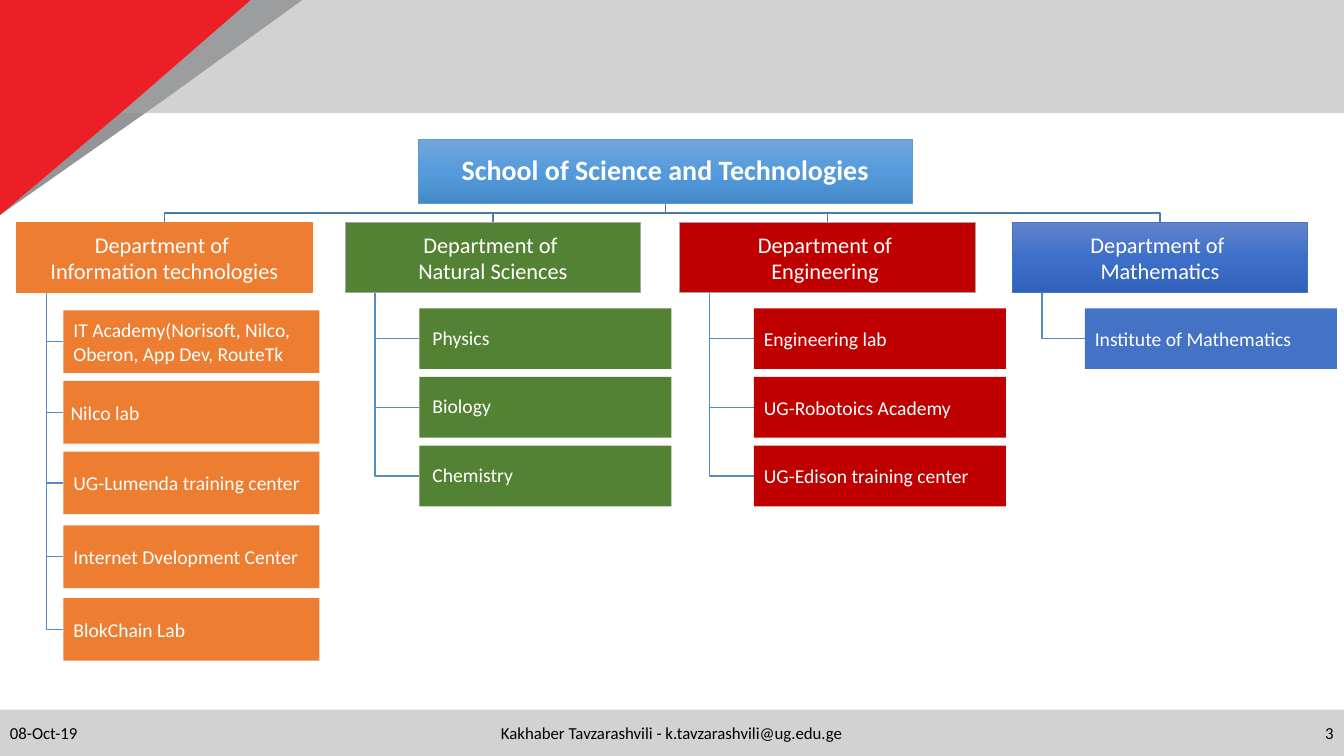
from copy import deepcopy
from dataclasses import dataclass

from lxml import etree
from pptx import Presentation
from pptx import util as u
from pptx.dml import color as dml
from pptx.enum import shapes, text
from pptx.oxml import ns

COLORS = {
    "white": "FFFFFF", "black": "000000", "band": "A6A6A6",
    "corner_red": "EC1F27", "corner_gray": "939597",
    "orange": "ED7D31", "green": "548235", "red": "C00000", "blue": "4472C4",
    "edge_gray": "A5A5A5", "edge_blue": "5B9BD5",
    "bus": "497CAB", "branch": "538DC1",
    "school_top": "71A6DB", "school_mid": "559BDB", "school_end": "448ACA",
    "maths_top": "6183CB", "maths_mid": "3E70CA", "maths_end": "3062BB",
}
SCHOOL_FILL = ("school_top", "school_mid", "school_end")
MATHS_FILL = ("maths_top", "maths_mid", "maths_end")

SLIDE_W, SLIDE_H = 33.87, 19.05
SCHOOL_LEFT, SCHOOL_TOP, SCHOOL_W, SCHOOL_H = 10.54, 3.52, 12.45, 1.61
DEPT_TOP, DEPT_W, DEPT_H = 5.61, 7.45, 1.76
BUS_Y = 5.37
TRUNK_SHIFT = 0.75
TIGHT, ROOMY = 0.03, 0.25


@dataclass
class Unit:
    name: str
    inset: float = ROOMY


@dataclass
class Department:
    lines: tuple[str, ...]
    left: float
    fills: tuple[str, ...]
    unit_fill: str
    edge: str
    unit_left: float
    units: tuple[Unit, ...]
    unit_tops: tuple[float, ...] = (7.77, 9.5, 11.23)
    unit_w: float = 6.35
    unit_h: float = 1.53
    spacing: float = 1.0


@dataclass
class FooterPart:
    words: str
    left: float
    width: float
    align: text.PP_ALIGN


DEPARTMENTS = (
    Department(
        ("Department of ", "Information technologies"), 0.42,
        ("orange",), "orange", "orange", 1.6,
        (Unit("IT Academy(Norisoft, Nilco, Oberon, App Dev, RouteTk"),
         Unit("Nilco lab", 0.18),
         Unit("UG-Lumenda training center"),
         Unit("Internet Dvelopment Center"),
         Unit("BlokChain Lab")),
        (7.82, 9.6, 11.38, 13.24, 15.07), 6.45, 1.58),
    Department(
        ("Department of ", "Natural Sciences"), 8.7,
        ("green",), "green", "edge_gray", 10.57,
        (Unit("Physics", 0.33), Unit("Biology", 0.33), Unit("Chemistry", 0.33)),
        spacing=0.9),
    Department(
        ("Department of ", "Engineering "), 17.13,
        ("red",), "red", "edge_gray", 19,
        (Unit("Engineering lab"), Unit("UG-Robotoics Academy"),
         Unit("UG-Edison training center"))),
    Department(
        ("Department of ", "Mathematics"), 25.51,
        MATHS_FILL, "blue", "blue", 27.34,
        (Unit("Institute of Mathematics"),)),
)
FOOTER = (
    FooterPart("08-Oct-19", 0, 7.62, text.PP_ALIGN.LEFT),
    FooterPart("Kakhaber Tavzarashvili - k.tavzarashvili@ug.edu.ge",
               7.62, 18.62, text.PP_ALIGN.CENTER),
    FooterPart("3", 26.24, 7.62, text.PP_ALIGN.RIGHT),
)


def rgb(name: str) -> dml.RGBColor:
    return dml.RGBColor.from_string(COLORS[name])


def paint(shape, fills: tuple[str, ...]) -> None:
    if len(fills) == 1:
        shape.fill.solid()
        shape.fill.fore_color.rgb = rgb(fills[0])
        return
    shape.fill.gradient()
    shape.fill.gradient_angle = 270
    stop_list = shape.element.xpath(".//a:gsLst")[0]
    stop_list.insert(1, deepcopy(stop_list[0]))
    for i, (stop, name) in enumerate(zip(shape.fill.gradient_stops, fills)):
        stop.color.rgb = rgb(name)
        stop.position = i / 2


def add_box(slide, left: float, top: float, width: float, height: float,
            fills: tuple[str, ...], edge: str | None = None):
    box = slide.shapes.add_shape(shapes.MSO_SHAPE.RECTANGLE, u.Cm(left),
                                 u.Cm(top), u.Cm(width), u.Cm(height))
    box.shadow.inherit = False
    paint(box, fills)
    if edge:
        box.line.color.rgb = rgb(edge)
        box.line.width = u.Pt(0.5)
    else:
        box.line.fill.background()
    return box


def write(shape, lines: tuple[str, ...], size: float, align: text.PP_ALIGN,
          inset: float, color: str = "white", bold: bool = False,
          spacing: float = 1.0) -> None:
    frame = shape.text_frame
    frame.word_wrap = True
    frame.vertical_anchor = text.MSO_ANCHOR.MIDDLE
    frame.margin_left = frame.margin_right = u.Cm(inset)
    frame.margin_top = frame.margin_bottom = u.Cm(TIGHT)
    for i, line in enumerate(lines):
        paragraph = frame.add_paragraph() if i else frame.paragraphs[0]
        paragraph.alignment = align
        paragraph.line_spacing = spacing
        run = paragraph.add_run()
        run.text = line
        run.font.name = "Calibri"
        run.font.size = u.Pt(size)
        run.font.bold = bold
        run.font.color.rgb = rgb(color)


def add_outline(slide, points: list[tuple[float, float]], closed: bool):
    corners = [(u.Cm(x), u.Cm(y)) for x, y in points]
    builder = slide.shapes.build_freeform(*corners[0])
    builder.add_line_segments(corners[1:], close=closed)
    outline = builder.convert_to_shape()
    outline.shadow.inherit = False
    return outline


def add_corner(slide, width: float, bend: float, color: str) -> None:
    corner = add_outline(
        slide, [(0, 0), (width, 0), (bend, 2.64), (0, 5.42)], True)
    paint(corner, (color,))
    corner.line.fill.background()


def add_link(slide, points: list[tuple[float, float]], color: str) -> None:
    link = add_outline(slide, points, False)
    link.fill.background()
    link.line.color.rgb = rgb(color)
    link.line.width = u.Pt(1)


def add_band(slide, top: float, height: float) -> None:
    band = add_box(slide, 0, top, SLIDE_W, height, ("band",))
    tint = band.element.xpath("./p:spPr/a:solidFill/a:srgbClr")[0]
    etree.SubElement(tint, ns.qn("a:alpha")).set("val", "50000")


def add_department(slide, dept: Department) -> None:
    school_mid = SCHOOL_LEFT + SCHOOL_W / 2
    dept_mid = dept.left + DEPT_W / 2
    add_link(slide, [(school_mid, SCHOOL_TOP + SCHOOL_H), (school_mid, BUS_Y),
                     (dept_mid, BUS_Y), (dept_mid, DEPT_TOP)], "bus")
    trunk = dept.left + TRUNK_SHIFT
    for unit, top in zip(dept.units, dept.unit_tops):
        middle = top + dept.unit_h / 2
        add_link(slide, [(trunk, DEPT_TOP + DEPT_H), (trunk, middle),
                         (dept.unit_left, middle)], "branch")
        box = add_box(slide, dept.unit_left, top, dept.unit_w, dept.unit_h,
                      (dept.unit_fill,))
        write(box, (unit.name,), 14, text.PP_ALIGN.LEFT, unit.inset,
              spacing=dept.spacing)
    head = add_box(slide, dept.left, DEPT_TOP, DEPT_W, DEPT_H,
                   dept.fills, dept.edge)
    write(head, dept.lines, 16, text.PP_ALIGN.CENTER, TIGHT)


def main() -> None:
    deck = Presentation()
    deck.slide_width, deck.slide_height = u.Cm(SLIDE_W), u.Cm(SLIDE_H)
    slide = deck.slides.add_slide(deck.slide_layouts[6])
    add_band(slide, 17.88, 1.17)
    add_corner(slide, 7.62, 3.96, "corner_gray")
    add_band(slide, 0, 2.85)
    add_corner(slide, 6.32, 3.28, "corner_red")
    for dept in DEPARTMENTS:
        add_department(slide, dept)
    school = add_box(slide, SCHOOL_LEFT, SCHOOL_TOP, SCHOOL_W, SCHOOL_H,
                     SCHOOL_FILL, "edge_blue")
    write(school, ("School of Science and Technologies",), 20,
          text.PP_ALIGN.CENTER, TIGHT, bold=True, spacing=0.9)
    for part in FOOTER:
        box = slide.shapes.add_textbox(u.Cm(part.left), u.Cm(17.96),
                                       u.Cm(part.width), u.Cm(1.02))
        write(box, (part.words,), 12, part.align, ROOMY, "black")
    deck.save("out.pptx")


if __name__ == "__main__":
    main()
